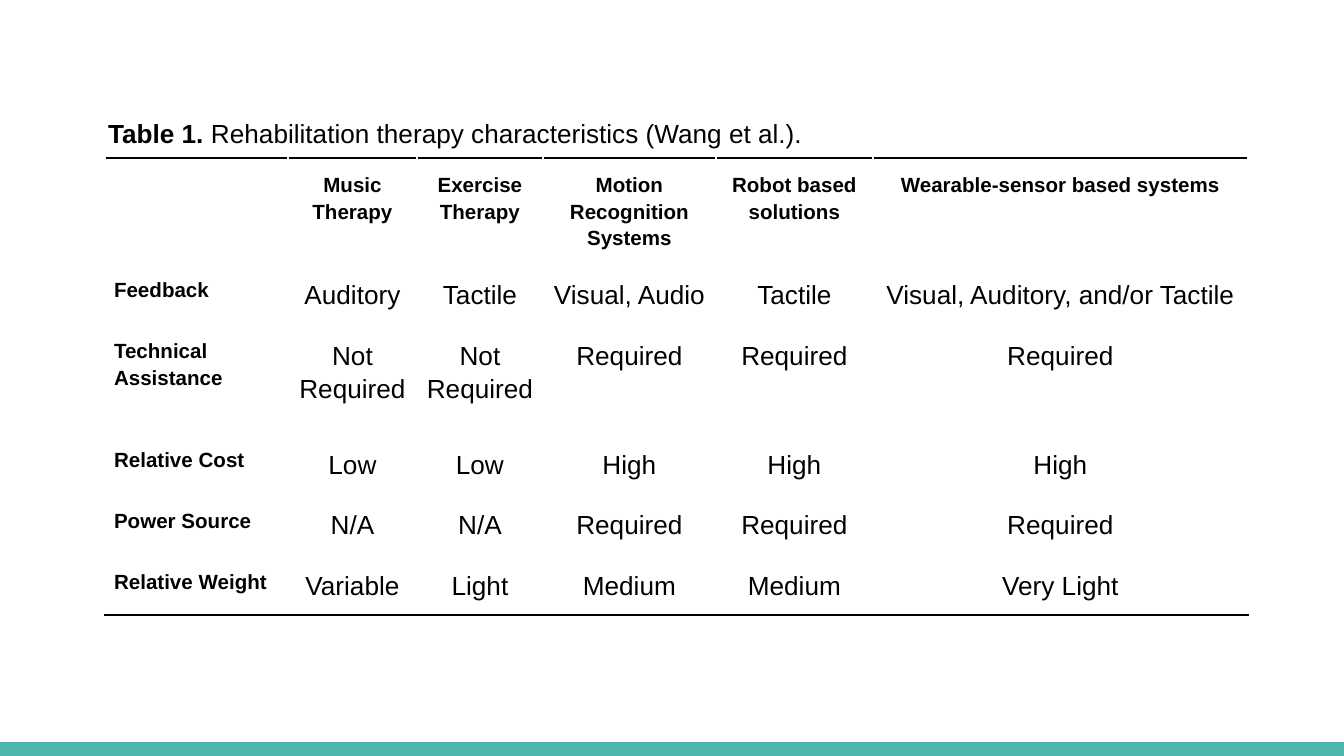
from dataclasses import dataclass
from lxml.etree import SubElement
from pptx import Presentation
from pptx.dml.color import RGBColor
from pptx.enum.shapes import MSO_SHAPE
from pptx.enum.text import MSO_ANCHOR, MSO_AUTO_SIZE, PP_ALIGN
from pptx.oxml.ns import qn
from pptx.util import Pt


@dataclass
class Theme:
    font: str = "Arial"
    ink: str = "000000"
    accent: str = "4DB6AC"
    label: int = 11
    body: int = 14
    rule: float = 1.5


theme = Theme()
PX = 6804
W, H = 1344, 756


def add_run(p, text, size, bold):
    r = p.add_run()
    r.text = text
    r.font.name = theme.font
    r.font.size = Pt(size)
    r.font.bold = bold
    r.font.color.rgb = RGBColor.from_string(theme.ink)


def add_rule(cell, side):
    tcPr = cell._tc.get_or_add_tcPr()
    ln = SubElement(tcPr, qn(f"a:{side}"), w=str(Pt(theme.rule)))
    fill = SubElement(ln, qn("a:solidFill"))
    SubElement(fill, qn("a:srgbClr"), val=theme.ink)
    tcPr.insert(0, ln)


prs = Presentation()
prs.slide_width, prs.slide_height = W * PX, H * PX
s = prs.slides.add_slide(prs.slide_layouts[5])

bar = s.shapes.add_shape(MSO_SHAPE.RECTANGLE, 0, 742 * PX, W * PX, 14 * PX)
bar.shadow.inherit = False
bar.fill.solid()
bar.fill.fore_color.rgb = RGBColor.from_string(theme.accent)
bar.line.fill.background()

caption = s.shapes.title
caption.left, caption.top, caption.width, caption.height = 95 * PX, 63 * PX, 969 * PX, 141 * PX
tf = caption.text_frame
tf.word_wrap = True
tf.auto_size = MSO_AUTO_SIZE.NONE
tf.vertical_anchor = MSO_ANCHOR.MIDDLE
tf.margin_left = tf.margin_right = tf.margin_top = tf.margin_bottom = 13 * PX
p = tf.paragraphs[0]
p.alignment = PP_ALIGN.LEFT
add_run(p, "Table 1. ", theme.body, True)
add_run(p, "Rehabilitation therapy characteristics (Wang et al.).", theme.body, False)

rows = [
    ["", "Music Therapy", "Exercise Therapy", "Motion Recognition Systems",
     "Robot based solutions", "Wearable-sensor based systems"],
    ["Feedback", "Auditory", "Tactile", "Visual, Audio", "Tactile",
     "Visual, Auditory, and/or Tactile"],
    ["Technical Assistance", "Not Required", "Not Required", "Required", "Required", "Required"],
    ["Relative Cost", "Low", "Low", "High", "High", "High"],
    ["Power Source", "N/A", "N/A", "Required", "Required", "Required"],
    ["Relative Weight", "Variable", "Light", "Medium", "Medium", "Very Light"],
]
col_widths = [183, 129, 126, 173, 157, 375]
row_heights = [105, 61, 109, 61, 61, 60]

frame = s.shapes.add_table(len(rows), len(col_widths), 105 * PX, 158 * PX,
                           sum(col_widths) * PX, sum(row_heights) * PX)
table = frame.table
table.first_row = False
table.horz_banding = False
for column, width in zip(table.columns, col_widths):
    column.width = width * PX
for row, height in zip(table.rows, row_heights):
    row.height = height * PX

for i, texts in enumerate(rows):
    for j, text in enumerate(texts):
        cell = table.cell(i, j)
        cell.fill.background()
        cell.margin_left = cell.margin_right = 9 * PX
        cell.margin_top = cell.margin_bottom = 13 * PX
        if i == 0:
            add_rule(cell, "lnT")
        if i == len(rows) - 1:
            add_rule(cell, "lnB")
        if text:
            heading = i == 0 or j == 0
            p = cell.text_frame.paragraphs[0]
            p.alignment = PP_ALIGN.CENTER if j else PP_ALIGN.LEFT
            p.line_spacing = 1.15
            add_run(p, text, theme.label if heading else theme.body, heading)

prs.save("out.pptx")
